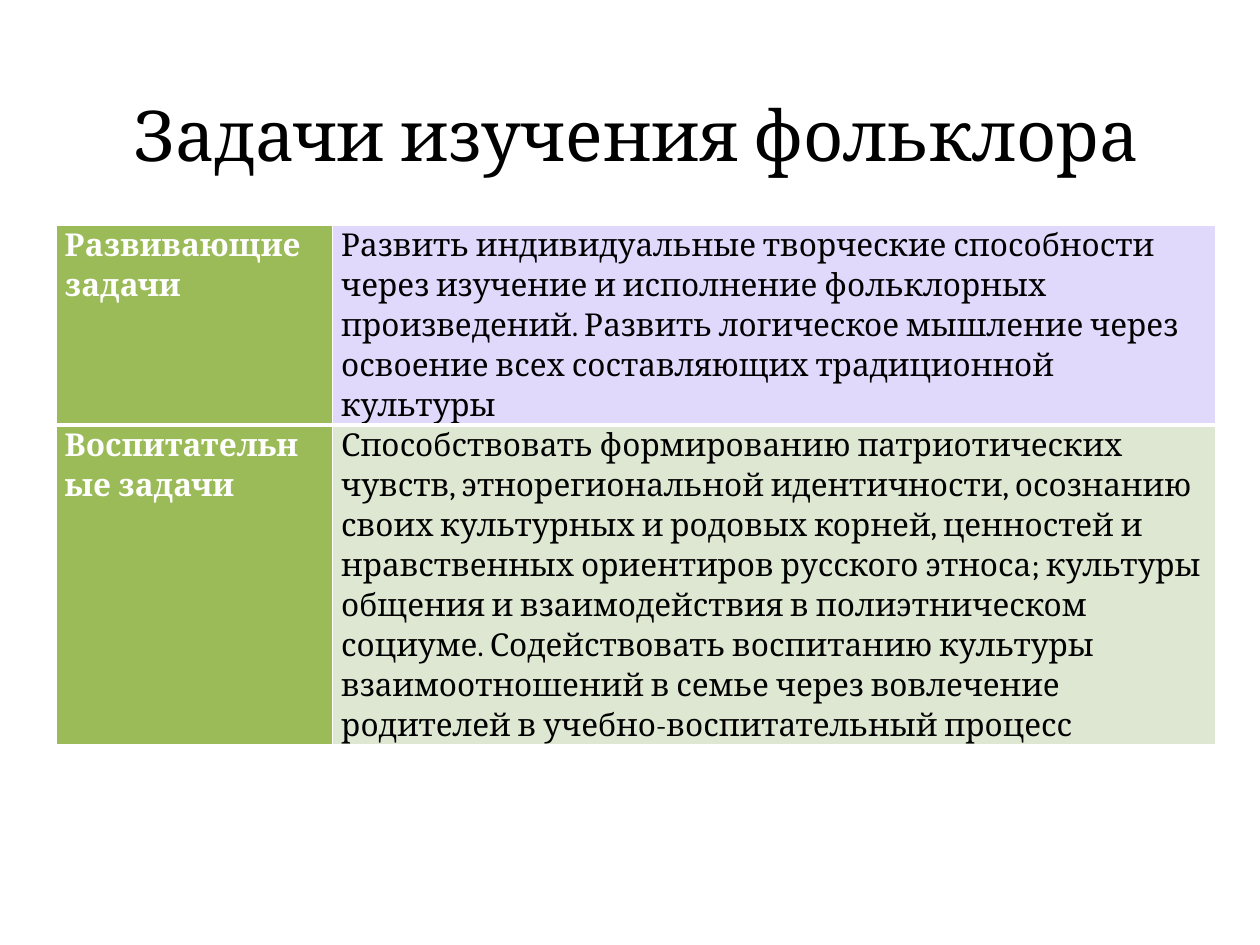
from pptx import Presentation
from pptx.dml.color import RGBColor
from pptx.enum.text import MSO_ANCHOR, PP_ALIGN
from pptx.oxml import parse_xml
from pptx.oxml.ns import nsdecls
from pptx.util import Pt

FONT = "Cambria"
COLORS = {
    "white": "FFFFFF",
    "black": "000000",
    "green": "9BBB59",
    "lilac": "E0D9FB",
    "sage": "DEE7D1",
}
TASKS = [
    ("Развивающие задачи",
     "Развить индивидуальные творческие способности через изучение и "
     "исполнение фольклорных произведений. Развить логическое мышление "
     "через освоение всех составляющих традиционной культуры",
     "lilac", 114, 3),
    ("Воспитательные задачи",
     "Способствовать формированию патриотических чувств, этнорегиональной "
     "идентичности, осознанию своих культурных и родовых корней, ценностей и "
     "нравственных ориентиров русского этноса; культуры общения и "
     "взаимодействия в полиэтническом социуме. Содействовать воспитанию "
     "культуры взаимоотношений в семье через вовлечение родителей в "
     "учебно-воспитательный процесс",
     "sage", 183, 1),
]


def write(frame, text, size=18, color="black", bold=False,
          align=PP_ALIGN.LEFT, space=1.0):
    """Put one formatted paragraph into a text frame."""
    para = frame.paragraphs[0]
    para.alignment = align
    para.line_spacing = space
    run = para.add_run()
    run.text = text
    font = run.font
    font.name, font.size, font.bold = FONT, Pt(size), bold
    font.color.rgb = RGBColor.from_string(COLORS[color])


def add_title(slide, text):
    """Add the centred slide title."""
    box = slide.shapes.add_textbox(Pt(39.6), Pt(49), Pt(648), Pt(79))
    frame = box.text_frame
    frame.word_wrap = True
    frame.vertical_anchor = MSO_ANCHOR.TOP
    write(frame, text, size=40, align=PP_ALIGN.CENTER)


def set_edges(cell, base):
    """Draw white cell borders with a given bottom width."""
    props = cell._tc.get_or_add_tcPr()
    for spot, (side, width) in enumerate(zip("LRTB", (1, 1, 1, base))):
        props.insert(spot, parse_xml(
            f'<a:ln{side} {nsdecls("a")} w="{Pt(width)}"><a:solidFill>'
            f'<a:srgbClr val="{COLORS["white"]}"/></a:solidFill></a:ln{side}>'))


def fill_cell(cell, text, fill, base, **style):
    """Format one table cell and write its text."""
    cell.margin_left = cell.margin_right = Pt(5)
    cell.margin_top = cell.margin_bottom = Pt(0)
    cell.fill.solid()
    cell.fill.fore_color.rgb = RGBColor.from_string(COLORS[fill])
    set_edges(cell, base)
    write(cell.text_frame, text, space=1.1, **style)


def add_tasks(slide, tasks):
    """Add the table of task groups."""
    high = sum(task[3] for task in tasks)
    table = slide.shapes.add_table(
        len(tasks), 2, Pt(32), Pt(128.5), Pt(663), Pt(high)).table
    for col, width in zip(table.columns, (158, 505)):
        col.width = Pt(width)
    for row, (name, text, fill, height, base) in zip(table.rows, tasks):
        row.height = Pt(height)
        head, body = row.cells
        fill_cell(head, name, "green", base, color="white", bold=True,
                  align=PP_ALIGN.JUSTIFY)
        fill_cell(body, text, fill, base)


def main():
    """Build and save the slide."""
    deck = Presentation()
    deck.slide_width, deck.slide_height = Pt(720), Pt(540)
    slide = deck.slides.add_slide(deck.slide_layouts[6])
    add_tasks(slide, TASKS)
    add_title(slide, "Задачи изучения фольклора")
    deck.save("out.pptx")


if __name__ == "__main__":
    main()
